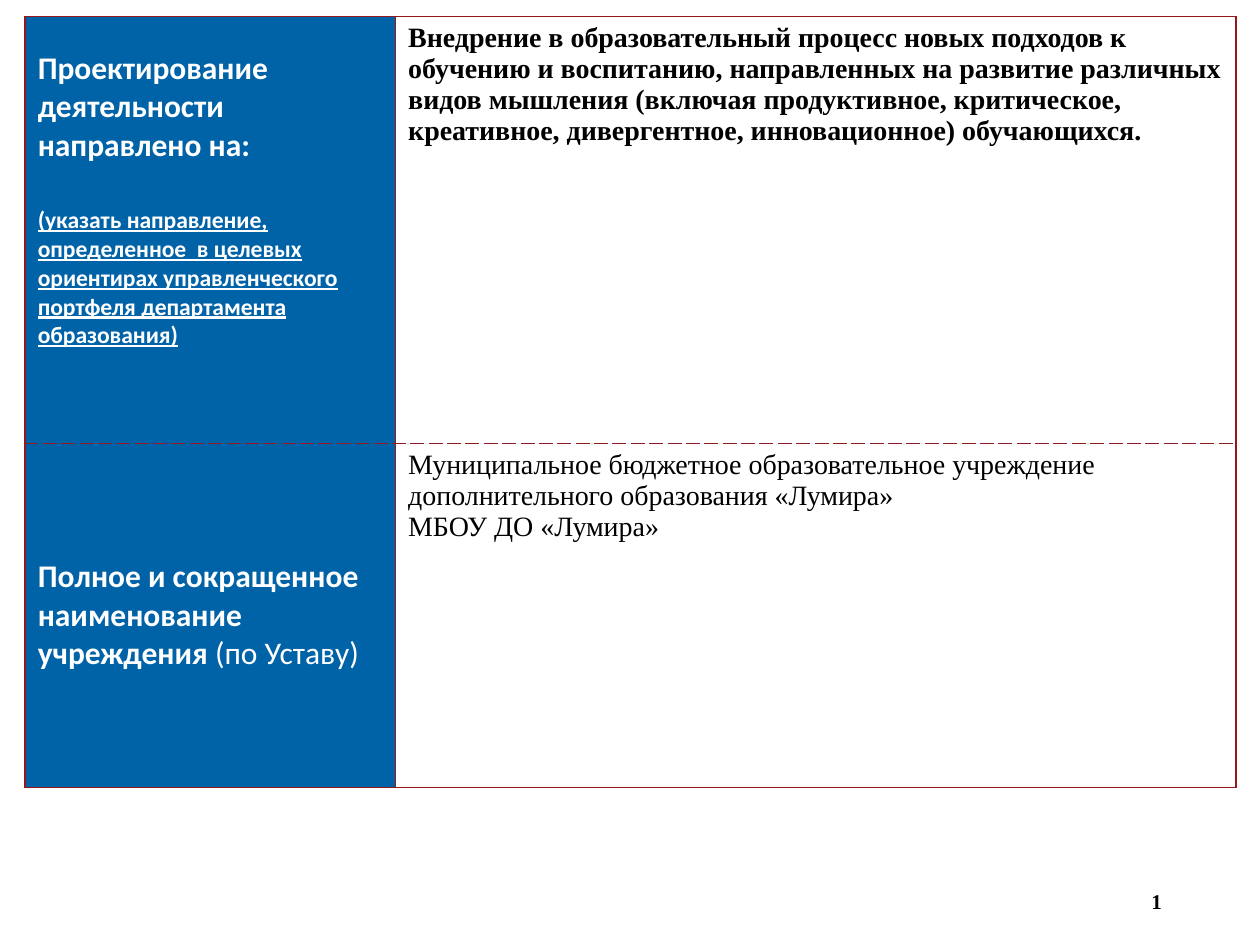
from typing import NamedTuple

from lxml import etree
from pptx import Presentation
from pptx.dml.color import RGBColor
from pptx.enum.text import MSO_ANCHOR, PP_ALIGN
from pptx.oxml.ns import qn
from pptx.util import Inches, Pt

TOP, MIDDLE = MSO_ANCHOR.TOP, MSO_ANCHOR.MIDDLE
LEFT, RIGHT = PP_ALIGN.LEFT, PP_ALIGN.RIGHT

BLUE = RGBColor(0x00, 0x62, 0xA7)
DARK_RED = RGBColor(0x92, 0x1A, 0x1D)
WHITE = RGBColor(0xFF, 0xFF, 0xFF)
BLACK = RGBColor(0x00, 0x00, 0x00)

HEADING_FONT = "Calibri"
BODY_FONT = "Times New Roman"

SLIDE_WIDTH, SLIDE_HEIGHT = 10, 7.5
TABLE_LEFT, TABLE_TOP = 0.2, 0.13
COLUMN_WIDTHS = (2.94, 6.67)
ROW_HEIGHTS = (3.39, 2.73)


class Run(NamedTuple):
    text: str
    size: float = 18
    bold: bool = True
    underline: bool = False


class TableRow(NamedTuple):
    heading: list[list[Run]]
    body: list[list[Run]]
    heading_bottom_margin: float = 0.05


ROWS = (
    TableRow(
        heading=[
            [Run("Проектирование деятельности  направлено на:")],
            [Run("(указать направление, определенное  в целевых ориентирах "
                 "управленческого портфеля департамента образования)",
                 size=13.5, underline=True)],
        ],
        body=[
            [Run("Внедрение в образовательный процесс новых подходов к обучению "
                 "и воспитанию, направленных на развитие различных видов мышления "
                 "(включая продуктивное, критическое, креативное, дивергентное, "
                 "инновационное) обучающихся.", size=16)],
        ],
        heading_bottom_margin=0.53,
    ),
    TableRow(
        heading=[
            [Run("Полное и сокращенное наименование учреждения"),
             Run(" (по Уставу)", bold=False)],
        ],
        body=[
            [Run("Муниципальное бюджетное образовательное учреждение "
                 "дополнительного образования «Лумира»", size=16, bold=False)],
            [Run("МБОУ ДО «Лумира»", size=16, bold=False)],
        ],
    ),
)


def write_text(text_frame, paragraphs: list[list[Run]], *, font: str, color: RGBColor,
               spacing: float = 0, alignment=LEFT) -> None:
    text_frame.word_wrap = True
    for index, runs in enumerate(paragraphs):
        paragraph = text_frame.add_paragraph() if index else text_frame.paragraphs[0]
        paragraph.alignment = alignment
        paragraph.space_before = paragraph.space_after = Pt(spacing)
        for content in runs:
            run = paragraph.add_run()
            run.text = content.text
            run.font.name = font
            run.font.size = Pt(content.size)
            run.font.bold = content.bold
            run.font.underline = content.underline
            run.font.color.rgb = color


def add_borders(cell, dashed_side: str) -> None:
    """Outline a cell, with a dashed line on the side shared by the two rows."""
    properties = cell._tc.get_or_add_tcPr()
    for side in ("lnL", "lnR", "lnT", "lnB"):
        line = etree.SubElement(properties, qn(f"a:{side}"), w=str(Pt(1)),
                                cap="flat", cmpd="sng")
        fill = etree.SubElement(line, qn("a:solidFill"))
        etree.SubElement(fill, qn("a:srgbClr"), val=str(DARK_RED))
        dash = "sysDash" if side == dashed_side else "solid"
        etree.SubElement(line, qn("a:prstDash"), val=dash)


def format_cell(cell, *, fill: RGBColor, anchor, dashed_side: str) -> None:
    add_borders(cell, dashed_side)
    cell.fill.solid()
    cell.fill.fore_color.rgb = fill
    cell.vertical_anchor = anchor


def add_project_table(slide) -> None:
    table = slide.shapes.add_table(
        len(ROW_HEIGHTS), len(COLUMN_WIDTHS), Inches(TABLE_LEFT), Inches(TABLE_TOP),
        Inches(sum(COLUMN_WIDTHS)), Inches(sum(ROW_HEIGHTS))).table
    table.first_row = table.horz_banding = False
    for column, width in zip(table.columns, COLUMN_WIDTHS):
        column.width = Inches(width)
    for index, (row, height) in enumerate(zip(ROWS, ROW_HEIGHTS)):
        table.rows[index].height = Inches(height)
        dashed_side = "lnT" if index else "lnB"
        heading, body = table.cell(index, 0), table.cell(index, 1)
        format_cell(heading, fill=BLUE, anchor=MIDDLE, dashed_side=dashed_side)
        heading.margin_bottom = Inches(row.heading_bottom_margin)
        write_text(heading.text_frame, row.heading, font=HEADING_FONT, color=WHITE,
                   spacing=12)
        format_cell(body, fill=WHITE, anchor=TOP, dashed_side=dashed_side)
        write_text(body.text_frame, row.body, font=BODY_FONT, color=BLACK)


def add_page_number(slide) -> None:
    box = slide.shapes.add_textbox(Inches(7.07), Inches(6.95), Inches(2.25), Inches(0.4))
    box.text_frame.vertical_anchor = MIDDLE
    write_text(box.text_frame, [[Run("1", size=12)]], font=BODY_FONT, color=BLACK,
               alignment=RIGHT)


def main() -> None:
    presentation = Presentation()
    presentation.slide_width = Inches(SLIDE_WIDTH)
    presentation.slide_height = Inches(SLIDE_HEIGHT)
    slide = presentation.slides.add_slide(presentation.slide_layouts[6])
    add_page_number(slide)
    add_project_table(slide)
    presentation.save("out.pptx")


if __name__ == "__main__":
    main()
